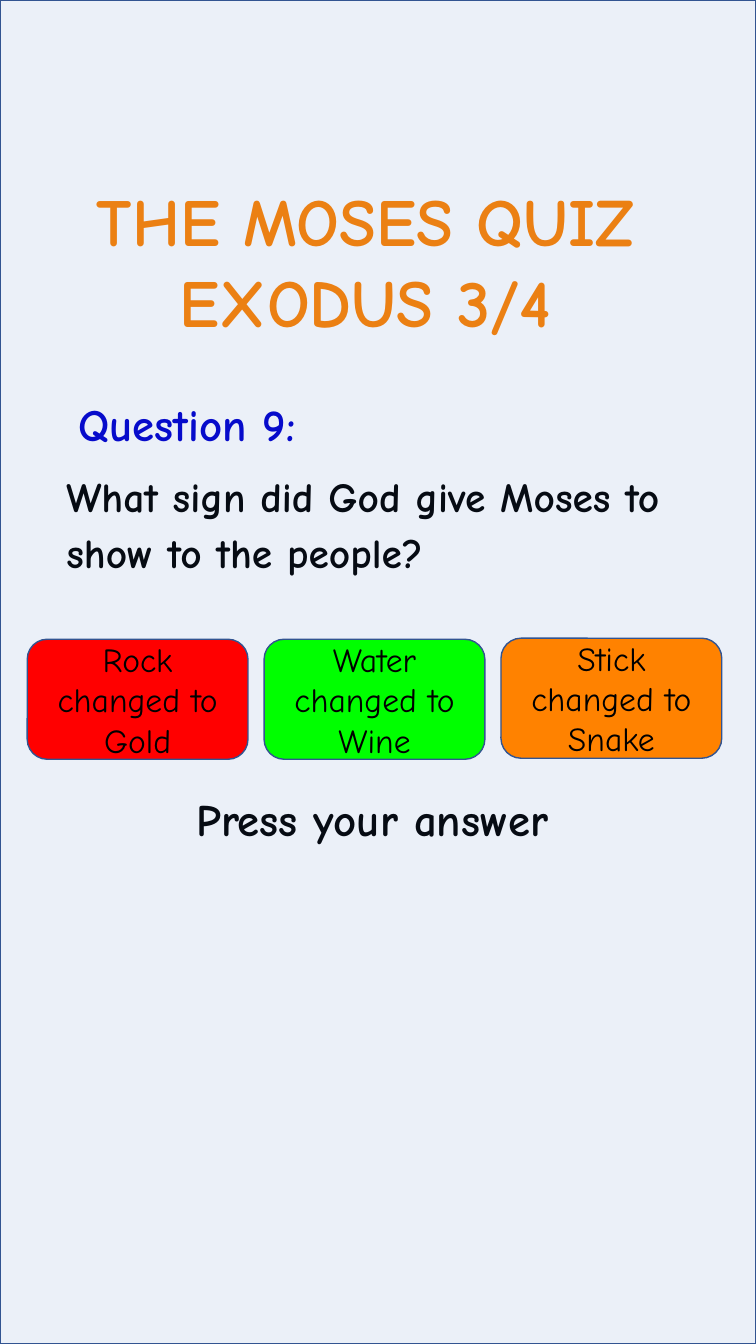
import pptx
import pptx.util
import pptx.dml.color
import pptx.enum.shapes
import pptx.enum.text
import pptx.oxml
import pptx.oxml.ns
import lxml.etree

EMU_PER_PX = 9144
FONT = "Comic Neue"
COLOURS = {
    "orange": "FF8200",
    "red": "FF0000",
    "green": "00FF00",
    "question": "0000CC",
    "black": "000000",
    "veil": "4472C4",
    "border": "325491",
}
CENTER = pptx.enum.text.PP_ALIGN.CENTER
LEFT = pptx.enum.text.PP_ALIGN.LEFT
SHAPES = pptx.enum.shapes.MSO_SHAPE


def px(length):
    return pptx.util.Emu(length * EMU_PER_PX)


def rgb(name):
    return pptx.dml.color.RGBColor.from_string(COLOURS[name])


def add_line(paragraph, text, size, colour, bold, align):
    paragraph.alignment = align
    run = paragraph.add_run()
    run.text = text
    run.font.name = FONT
    run.font.size = pptx.util.Pt(size)
    run.font.bold = bold
    run.font.color.rgb = rgb(colour)
    return run


def add_text(slide, box, lines, size, colour, align=LEFT, wrap=True, spacing=None, before=0):
    frame = slide.shapes.add_textbox(*map(px, box)).text_frame
    frame.word_wrap = wrap
    if not wrap:
        frame.auto_size = pptx.enum.text.MSO_AUTO_SIZE.SHAPE_TO_FIT_TEXT
    runs = []
    for index, text in enumerate(lines):
        paragraph = frame.add_paragraph() if index else frame.paragraphs[0]
        paragraph.line_spacing = spacing
        paragraph.space_before = pptx.util.Pt(before)
        runs.append(add_line(paragraph, text, size, colour, True, align))
    return runs


def outline_text(run, colour, width):
    properties = run.font._element
    outline = pptx.oxml.parse_xml(
        f'<a:ln {pptx.oxml.ns.nsdecls("a")} w="{pptx.util.Pt(width)}"><a:solidFill>'
        f'<a:srgbClr val="{COLOURS[colour]}"/></a:solidFill></a:ln>'
    )
    properties.insert(0, outline)


def add_panel(slide, kind, box, fill):
    shape = slide.shapes.add_shape(kind, *map(px, box))
    shape.shadow.inherit = False
    shape.fill.solid()
    shape.fill.fore_color.rgb = rgb(fill)
    shape.line.color.rgb = rgb("border")
    shape.line.width = pptx.util.Pt(1)
    return shape


def set_opacity(shape, percent):
    tag = pptx.oxml.ns.qn
    colour = shape.fill._xPr.find(tag("a:solidFill")).find(tag("a:srgbClr"))
    lxml.etree.SubElement(colour, tag("a:alpha"), val=str(percent * 1000))


def add_answer(slide, left, top, text, fill):
    button = add_panel(slide, SHAPES.ROUNDED_RECTANGLE, (left, top, 219, 119), fill)
    frame = button.text_frame
    frame.word_wrap = True
    frame.vertical_anchor = pptx.enum.text.MSO_ANCHOR.MIDDLE
    add_line(frame.paragraphs[0], text, 24, "black", False, CENTER)


def main():
    presentation = pptx.Presentation()
    presentation.slide_width = px(750)
    presentation.slide_height = px(1333)
    slide = presentation.slides.add_slide(presentation.slide_layouts[6])

    title = ["THE MOSES QUIZ ", "EXODUS 3/4 "]
    for run in add_text(slide, (30, 173, 689, 172), title, 48, "orange", CENTER, wrap=False):
        outline_text(run, "red", 1.06)
    add_text(slide, (47, 389, 277, 64), ["Question 9:"], 32, "question", CENTER, wrap=False)
    question = ["What sign did God give Moses to show to the people?"]
    add_text(slide, (56, 456, 636, 146), question, 29.6, "black",
             spacing=pptx.util.Pt(40), before=7.5)
    add_text(slide, (185, 786, 422, 72), ["Press your answer"], 32, "black",
             spacing=0.9, before=7.5)

    veil = add_panel(slide, SHAPES.RECTANGLE, (0, 0, 750, 1333), "veil")
    set_opacity(veil, 10)

    answers = [
        ("Rock changed to Gold", "red", 634),
        ("Water changed to Wine", "green", 634),
        ("Stick changed to Snake", "orange", 633),
    ]
    for index, (text, fill, top) in enumerate(answers):
        add_answer(slide, 27 + 235 * index, top, text, fill)

    presentation.save("out.pptx")


if __name__ == "__main__":
    main()
